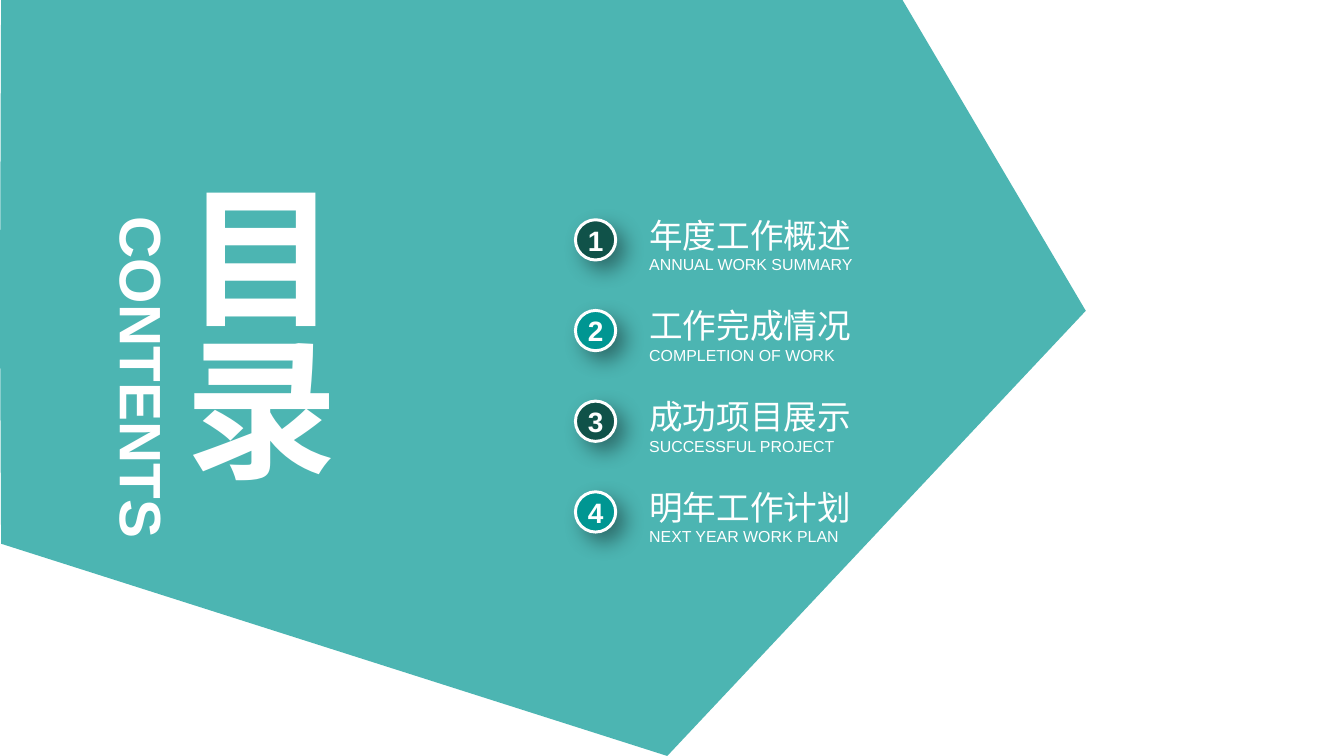
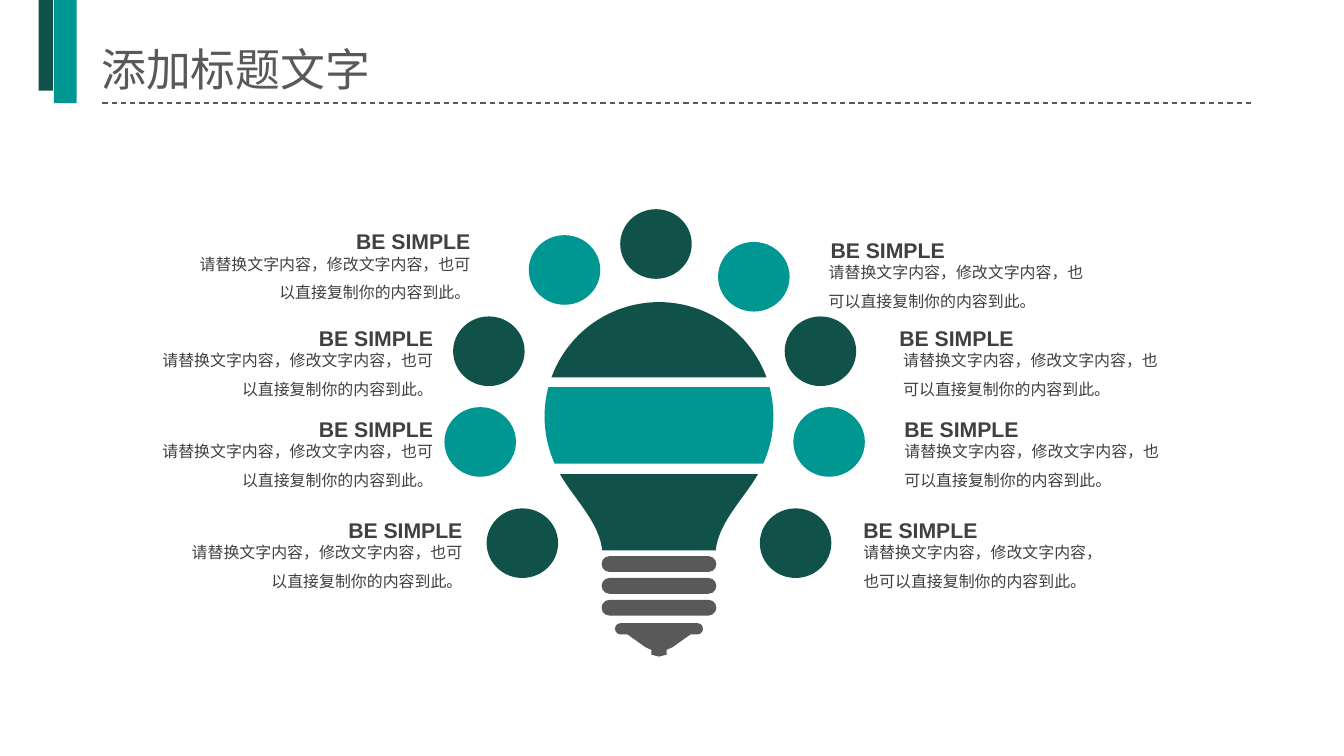
"""Build a contents slide and a light-bulb diagram slide."""
from math import asin, cos, pi, sin

from lxml.etree import SubElement
from pptx import Presentation
from pptx.dml.color import RGBColor
from pptx.enum.dml import MSO_LINE
from pptx.enum.shapes import MSO_CONNECTOR, MSO_SHAPE as SHAPE
from pptx.enum.text import MSO_ANCHOR as ANCHOR, PP_ALIGN as ALIGN
from pptx.oxml.ns import qn
from pptx.util import Cm, Pt

DARK = RGBColor(0x10, 0x52, 0x49)
TEAL = RGBColor(0x00, 0x96, 0x92)
GRAY = RGBColor(0x59, 0x59, 0x59)
INK = RGBColor(0x40, 0x40, 0x40)
WHITE = RGBColor(0xFF, 0xFF, 0xFF)


def put_text(sp, *lines, color=INK, bold=False, align=ALIGN.LEFT, anchor=ANCHOR.TOP,
             spacing=None, wrap=True, font="Arial"):
    tf = sp.text_frame
    tf.word_wrap = wrap
    tf.vertical_anchor = anchor
    tf.margin_left = tf.margin_right = tf.margin_top = tf.margin_bottom = 0
    for i, (text, size) in enumerate(lines):
        p = tf.add_paragraph() if i else tf.paragraphs[0]
        p.alignment = align
        p.line_spacing = spacing
        r = p.add_run()
        r.text = text
        r.font.size = Pt(size)
        r.font.bold = bold
        r.font.color.rgb = color
        r.font.name = font
        SubElement(r.font._element, qn("a:ea"), typeface=font)


def add_solid(s, fill, box=None, kind=SHAPE.RECTANGLE, points=None):
    if points:
        (x, y), *rest = [(Cm(px), Cm(py)) for px, py in points]
        builder = s.shapes.build_freeform(x, y)
        builder.add_line_segments(rest)
        sp = builder.convert_to_shape()
    else:
        sp = s.shapes.add_shape(kind, *map(Cm, box))
    sp.shadow.inherit = False
    sp.fill.solid()
    sp.fill.fore_color.rgb = fill
    sp.line.fill.background()
    return sp


prs = Presentation()
prs.slide_width, prs.slide_height = Cm(35.71), Cm(20.09)
blank = prs.slide_layouts[6]

s = prs.slides.add_slide(blank)
panel = add_solid(s, TEAL, points=[(0.03, 0), (23.98, 0), (28.85, 8.26), (17.73, 20.09),
                                   (0.03, 14.45), (0, 8.2)])
color = panel.fill._xPr.find(qn("a:solidFill"))[0]
SubElement(color, qn("a:alpha"), val="70000")

chapters = [
    ("年度工作概述", "ANNUAL WORK SUMMARY"),
    ("工作完成情况", "COMPLETION OF WORK"),
    ("成功项目展示", "SUCCESSFUL PROJECT"),
    ("明年工作计划", "NEXT YEAR WORK PLAN"),
]
for i, (name, english) in enumerate(chapters):
    y = 5.84 + 2.41 * i
    badge = add_solid(s, (DARK, TEAL)[i % 2], (15.29, y, 1.07, 1.07), SHAPE.OVAL)
    badge.line.color.rgb = WHITE
    badge.line.width = Pt(2.25)
    effects = badge._element.spPr.find(qn("a:effectLst"))
    shadow = SubElement(effects, qn("a:outerShdw"), blurRad=str(Pt(16)), dist=str(Pt(9)),
                        dir="2700000", algn="tl", rotWithShape="0")
    black = SubElement(shadow, qn("a:srgbClr"), val="000000")
    SubElement(black, qn("a:alpha"), val="40000")
    put_text(badge, (str(i + 1), 21.1), color=WHITE, bold=True, align=ALIGN.CENTER,
             anchor=ANCHOR.MIDDLE)
    label = s.shapes.add_textbox(Cm(17.25), Cm(y - 0.15), Cm(6.86), Cm(1.6))
    put_text(label, (name, 25.3), (english, 12), color=WHITE, anchor=ANCHOR.MIDDLE)

heading = s.shapes.add_textbox(Cm(4.34), Cm(4.78), Cm(4.93), Cm(10.54))
put_text(heading, ("目录", 115), color=WHITE, bold=True, align=ALIGN.CENTER,
         anchor=ANCHOR.MIDDLE)
heading.text_frame._txBody.bodyPr.set("vert", "eaVert")
contents = s.shapes.add_textbox(Cm(-0.79), Cm(9.09), Cm(9.17), Cm(1.88))
contents.rotation = 90
put_text(contents, ("CONTENTS", 44), color=WHITE, bold=True, align=ALIGN.CENTER)

s = prs.slides.add_slide(blank)
add_solid(s, DARK, (1.03, 0, 0.38, 2.41))
add_solid(s, TEAL, (1.43, 0, 0.61, 2.74))
title = s.shapes.add_textbox(Cm(2.69), Cm(1.27), Cm(17.4), Cm(1.35))
put_text(title, ("添加标题文字", 33.8), color=GRAY, spacing=0.9, font="Noto Sans CJK SC")
rule = s.shapes.add_connector(MSO_CONNECTOR.STRAIGHT, Cm(2.72), Cm(2.74), Cm(33.27), Cm(2.74))
rule.line.color.rgb = GRAY
rule.line.width = Pt(1)
rule.line.dash_style = MSO_LINE.DASH
SubElement(rule._element.spPr, qn("a:effectLst"))

AXIS, CENTER, RADIUS, STEPS = 17.51, 11.07, 3.04, 24
halves = []
for fill, top, bottom in [(DARK, CENTER - RADIUS, 10.03), (TEAL, 10.29, 12.32)]:
    start, end = (asin((y - CENTER) / RADIUS) for y in (top, bottom))
    angles = [start + (end - start) * i / STEPS for i in range(STEPS + 1)]
    halves.append((fill, [(RADIUS * cos(a), CENTER + RADIUS * sin(a)) for a in angles]))
neck = [(2.63, 12.6), (2.29, 13.21), (1.57, 13.89), (1.51, 14.63)]
curve = []
for i in range(STEPS + 1):
    t = i / STEPS
    weights = ((1 - t) ** 3, 3 * t * (1 - t) ** 2, 3 * t * t * (1 - t), t ** 3)
    curve.append(tuple(sum(w * v for w, v in zip(weights, axis)) for axis in zip(*neck)))
halves.append((DARK, curve))
halves.append((GRAY, [(0.85, 16.85), (0.36, 17.2), (0.2, 17.27), (0.2, 17.4), (0, 17.45)]))
for fill, half in halves:
    right = [(AXIS + dx, y) for dx, y in half]
    left = [(AXIS - dx, y) for dx, y in reversed(half)]
    add_solid(s, fill, points=right + left)

rings = [(3.05, 14.78 + 0.58 * i, 0.42) for i in range(3)] + [(2.34, 16.56, 0.3)]
for width, y, height in rings:
    ring = add_solid(s, GRAY, (AXIS - width / 2, y, width, height), SHAPE.ROUNDED_RECTANGLE)
    ring.adjustments[0] = 0.5

circles = [
    (12.04, 8.41, DARK), (11.81, 10.82, TEAL), (12.93, 13.51, DARK),
    (20.85, 8.41, DARK), (21.08, 10.82, TEAL), (20.19, 13.51, DARK),
    (14.05, 6.25, TEAL), (16.48, 5.56, DARK), (19.08, 6.43, TEAL),
]
for x, y, fill in circles:
    add_solid(s, fill, (x, y, 1.9, 1.85), SHAPE.OVAL)

TITLE_WIDTH, LEFT_WIDTH = 3.07, 7.44
notes = [(edge - TITLE_WIDTH, edge - LEFT_WIDTH, y, LEFT_WIDTH, ALIGN.RIGHT)
         for edge, y in [(12.5, 5.74), (11.51, 8.31), (11.51, 10.72), (12.29, 13.41)]]
notes += [(title_x, body_x, y, width, ALIGN.LEFT) for title_x, body_x, y, width in [
    (22.07, 22.02, 5.97, 7.06), (23.9, 24, 8.31, 7.06),
    (24.03, 24.03, 10.72, 7.06), (22.94, 22.94, 13.41, 6.76)]]
for title_x, body_x, y, width, align in notes:
    name = s.shapes.add_textbox(Cm(title_x), Cm(y), Cm(TITLE_WIDTH), Cm(1.02))
    put_text(name, ("BE SIMPLE", 16), bold=True, align=align, spacing=1.5, wrap=False)
    body = s.shapes.add_textbox(Cm(body_x), Cm(y + 0.76), Cm(width), Cm(1.45))
    put_text(body, ("请替换文字内容，修改文字内容，也可以直接复制你的内容到此。", 12),
             align=align, spacing=1.5)

prs.save("out.pptx")
